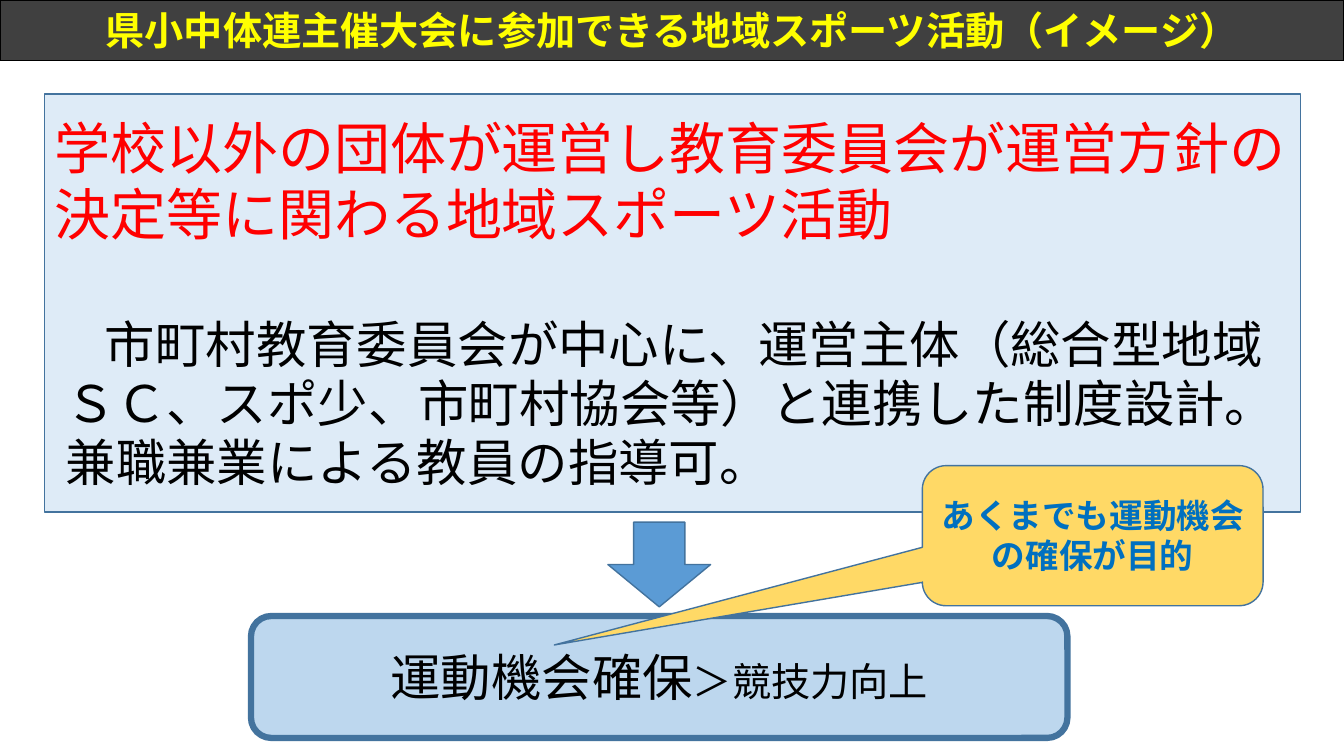
import pptx
import pptx.util
import pptx.dml.color
import pptx.enum.shapes
import pptx.enum.text
import pptx.oxml
import pptx.oxml.ns

Pt = pptx.util.Pt
MSO = pptx.enum.shapes.MSO_SHAPE
ALIGN = pptx.enum.text.PP_ALIGN
FONT = "Noto Sans CJK JP"
LEADING = 1.18
EDGE = "43739E"

TITLE = {
    "box": (0, 0, 960, 43.2), "fill": "404040", "line": ("000000", 1),
    "paras": [{"align": ALIGN.CENTER, "runs": [
        ("県小中体連主催大会に参加できる地域スポーツ活動（イメージ）", 28, "FFFF00", True)]}],
}
BODY = {
    "box": (31.7, 67, 897.1, 298.8), "fill": "DEEBF7", "line": (EDGE, 1),
    "paras": [
        {"runs": [("学校以外の団体が運営し教育委員会が運営方針の決定等に関わる地域スポーツ活動",
                   40, "FF0000", False)]},
        {"before": 49, "indent": 36, "runs": [
            ("市町村教育委員会が中心に、運営主体（総合型地域", 36, "000000", False)]},
        {"indent": 8, "runs": [
            ("ＳＣ、スポ少、市町村協会等）と連携した制度設計。", 36, "000000", False)]},
        {"indent": 8, "runs": [("兼職兼業による教員の指導可。", 36, "000000", False)]},
    ],
}
SHAPES = [
    {"kind": MSO.ROUNDED_RECTANGLE, "box": (179.3, 440, 583.2, 87.1),
     "fill": "BDD7EE", "line": (EDGE, 4.5),
     "paras": [{"align": ALIGN.CENTER, "runs": [
         ("運動機会確保", 36, "000000", False), ("＞競技力向上", 28, "000000", False)]}]},
    {"kind": MSO.DOWN_ARROW, "box": (434.2, 373, 73.4, 60.5),
     "fill": "5B9BD5", "line": (EDGE, 1), "paras": []},
    {"kind": MSO.ROUNDED_RECTANGULAR_CALLOUT, "box": (658.8, 332.6, 243.4, 100.1),
     "adj": (-1.58, 0.78, 0.17), "fill": "FFD966", "line": (EDGE, 1),
     "paras": [{"align": ALIGN.CENTER, "runs": [
         ("あくまでも運動機会の確保が目的", 24, "0070C0", True)]}]},
]


def rgb(value):
    return pptx.dml.color.RGBColor.from_string(value)


def set_attrs(obj, values):
    for name, value in values.items():
        setattr(obj, name, value)


def add_run(p, text, size, color, bold):
    r = p.add_run()
    r.text = text
    r.font.color.rgb = rgb(color)
    set_attrs(r.font, {"name": FONT, "size": Pt(size), "bold": bold})
    ea = pptx.oxml.parse_xml(
        f'<a:ea {pptx.oxml.ns.nsdecls("a")} typeface="{FONT}"/>')
    r.font._element.append(ea)


def write(tf, paras):
    set_attrs(tf, {
        "word_wrap": True,
        "auto_size": pptx.enum.text.MSO_AUTO_SIZE.NONE,
        "vertical_anchor": pptx.enum.text.MSO_ANCHOR.MIDDLE,
    })
    for i, item in enumerate(paras):
        p = tf.add_paragraph() if i else tf.paragraphs[0]
        pPr = p._p.get_or_add_pPr()
        pPr.set("marL", str(Pt(item.get("indent", 0))))
        pPr.set("indent", "0")
        pPr.append(pptx.oxml.parse_xml(f'<a:buNone {pptx.oxml.ns.nsdecls("a")}/>'))
        size = max(run[1] for run in item["runs"])
        set_attrs(p, {
            "alignment": item.get("align", ALIGN.LEFT),
            "line_spacing": Pt(round(size * LEADING)),
            "space_before": Pt(item.get("before", 0)),
            "space_after": Pt(0),
        })
        for run in item["runs"]:
            add_run(p, *run)


def dress(sp, item):
    set_attrs(sp, dict(zip(("left", "top", "width", "height"), map(Pt, item["box"]))))
    sp.shadow.inherit = False
    sp.fill.solid()
    sp.fill.fore_color.rgb = rgb(item["fill"])
    color, width = item["line"]
    sp.line.color.rgb = rgb(color)
    sp.line.width = Pt(width)
    for i, value in enumerate(item.get("adj", ())):
        sp.adjustments[i] = value
    if item["paras"]:
        write(sp.text_frame, item["paras"])


def main():
    prs = pptx.Presentation()
    set_attrs(prs, {"slide_width": Pt(960), "slide_height": Pt(540)})
    s = prs.slides.add_slide(prs.slide_layouts[1])
    dress(s.shapes.title, TITLE)
    dress(s.placeholders[1], BODY)
    for item in SHAPES:
        dress(s.shapes.add_shape(item["kind"], *map(Pt, item["box"])), item)
    prs.save("out.pptx")


if __name__ == "__main__":
    main()
